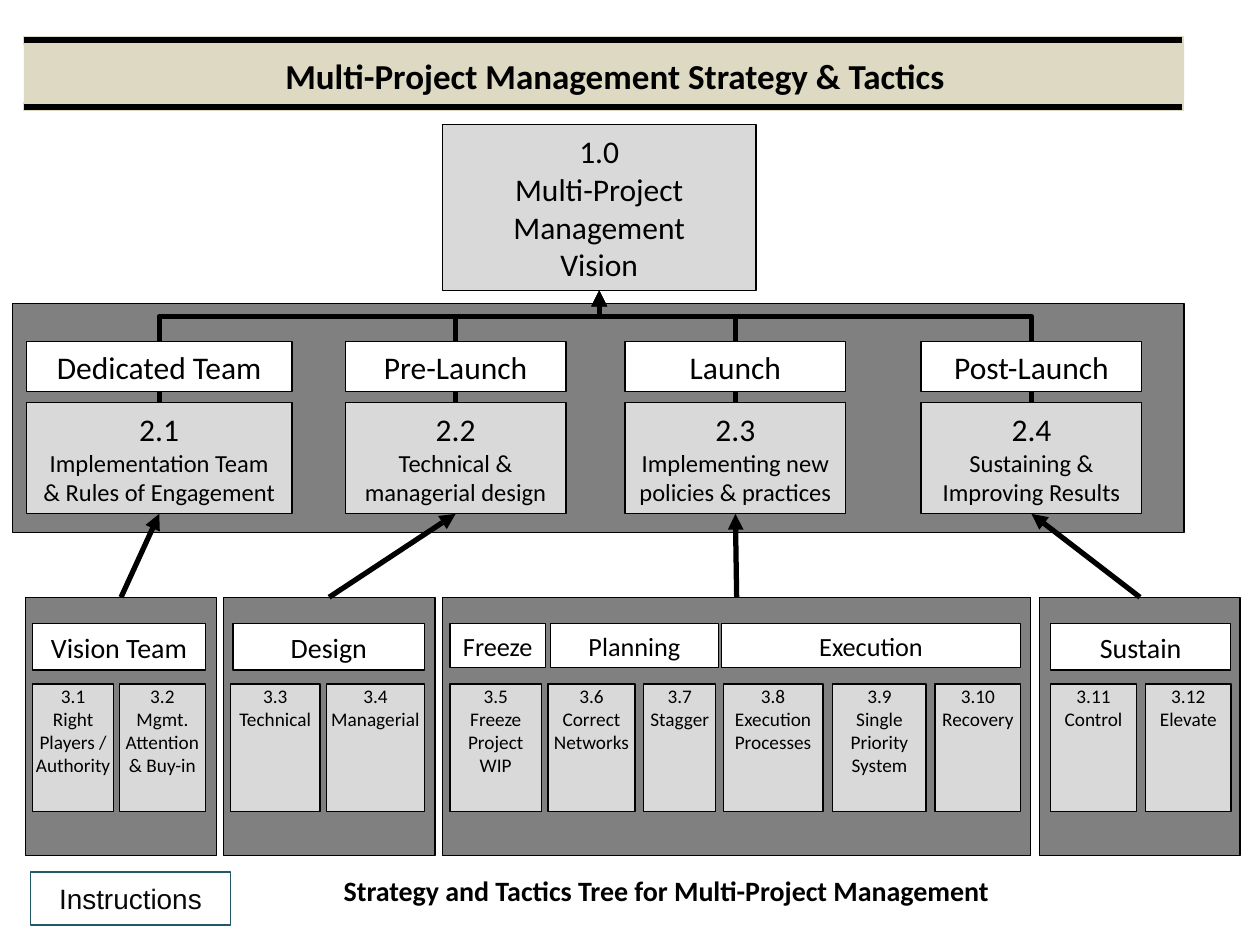
from lxml import etree
from pptx import Presentation
from pptx.dml.color import RGBColor as RGB
from pptx.enum.shapes import MSO_CONNECTOR as Link, MSO_SHAPE as Kind
from pptx.enum.text import MSO_ANCHOR as Anchor, PP_ALIGN as Align
from pptx.oxml.ns import qn
from pptx.util import Cm, Pt


class Theme:
    black, white = RGB(0, 0, 0), RGB(255, 255, 255)
    gray, pale = RGB(0x80, 0x80, 0x80), RGB(0xD9, 0xD9, 0xD9)
    sand, teal, ink = RGB(0xDD, 0xD9, 0xC3), RGB(0x21, 0x59, 0x68), RGB(8, 8, 8)
    font, plain = "Calibri", "Arial"
    title, big, head, mid, body, small = 20, 18, 16, 15, 14, 11
    thin, thick = 0.75, 3


deck = Presentation()
deck.slide_width, deck.slide_height = Cm(25.4), Cm(19.05)
slide = deck.slides.add_slide(deck.slide_layouts[6])
shapes = slide.shapes


def box(spot, fill, edge=Theme.black, lines=(), pad=(0.25, 0.13),
        anchor=Anchor.MIDDLE, font=Theme.font, color=Theme.black, bold=False):
    """Add a rectangle; lines holds (text, size) pairs."""
    rect = shapes.add_shape(Kind.RECTANGLE, *map(Cm, spot))
    rect.shadow.inherit = False
    rect.fill.solid()
    rect.fill.fore_color.rgb = fill
    if edge is None:
        rect.line.fill.background()
    else:
        rect.line.color.rgb = edge
        rect.line.width = Pt(Theme.thin)
    frame = rect.text_frame
    frame.word_wrap = True
    frame.vertical_anchor = anchor
    frame.margin_left = frame.margin_right = Cm(pad[0])
    frame.margin_top = frame.margin_bottom = Cm(pad[1])
    for i, (text, size) in enumerate(lines):
        para = frame.add_paragraph() if i else frame.paragraphs[0]
        para.text = text
        para.alignment = Align.CENTER
        para.font.name, para.font.size = font, Pt(size)
        para.font.color.rgb, para.font.bold = color, bold
    return rect


def arrow(kind):
    """Add a thick black connector with an arrowhead at its end."""
    line = shapes.add_connector(kind, 0, 0, 0, 0)
    line.line.color.rgb = Theme.black
    line.line.width = Pt(Theme.thick)
    props = line._element.spPr
    etree.SubElement(props.find(qn("a:ln")), qn("a:tailEnd"), type="triangle")
    etree.SubElement(props, qn("a:effectLst"))
    return line


# Title band
box((0.48, 0.86, 23.39, 1.22), Theme.sand, None)
for top in (0.74, 2.08):
    box((0.48, top, 23.37, 0.15), Theme.black, Theme.sand)
box((5.44, 0.97, 13.92, 1.12), Theme.sand, None,
    [("Multi-Project Management Strategy & Tactics", Theme.title)], bold=True)

# Vision box and gray panels
vision = box((8.92, 2.51, 6.32, 3.35), Theme.pale, lines=[
    (text, Theme.big) for text in ("1.0", "Multi-Project Management", "Vision")])
box((0.25, 6.12, 23.62, 4.62), Theme.gray)
panels = [box((x, 12.04, w, 5.21), Theme.gray)
          for x, w in ((0.51, 3.86), (4.5, 4.27), (8.92, 11.86), (20.96, 4.04))]

# Four phases, each linked up to the vision and from its panel
phases = (
    (0.53, 5.36, "Dedicated Team", "2.1", "Implementation Team & Rules of Engagement"),
    (6.96, 4.45, "Pre-Launch", "2.2", "Technical & managerial design"),
    (12.6, 4.45, "Launch", "2.3", "Implementing new policies & practices"),
    (18.57, 4.45, "Post-Launch", "2.4", "Sustaining & Improving Results"),
)
goal, foot = vision.left + vision.width // 2, vision.top + vision.height
for (x, w, name, num, text), panel in zip(phases, panels):
    phase = box((x, 8.12, w, 2.24), Theme.pale,
                lines=[(num, Theme.big), (text, Theme.body)])

    # Elbow that leaves upward: a turned frame around the midpoint
    start = phase.left + phase.width // 2
    rise, run = phase.top - foot, abs(goal - start)
    elbow = arrow(Link.ELBOW)
    elbow.left = (start + goal - rise) // 2
    elbow.top = (phase.top + foot - run) // 2
    elbow.width, elbow.height = rise, run
    form = elbow._element.spPr.find(qn("a:xfrm"))
    left = start < goal
    form.set("rot", str((90 if left else 270) * 60000))
    form.set("flipH", "1" if left else "0")
    form.set("flipV", "1")
    bends = elbow._element.spPr.find(qn("a:prstGeom")).get_or_add_avLst()
    etree.SubElement(bends, qn("a:gd"), name="adj1", fmla="val 77000")

    box((x, 6.88, w, 1.02), Theme.white, lines=[(name, Theme.big)])
    link = arrow(Link.STRAIGHT)
    link.begin_connect(panel, 0)
    link.end_connect(phase, 2)

# Group headers
heads = (
    (0.66, 3.48, "Vision Team", Theme.head), (4.7, 3.86, "Design", Theme.head),
    (9.07, 1.93, "Freeze", Theme.mid), (11.1, 3.38, "Planning", Theme.mid),
    (14.55, 6.02, "Execution", Theme.mid), (21.18, 3.63, "Sustain", Theme.head),
)
for x, w, name, size in heads:
    high = 0.94 if size == Theme.head else 0.89
    box((x, 12.57, w, high), Theme.white, lines=[(name, size)], pad=(0, 0))

# Numbered tactics
tiles = (
    (0.66, 1.63, "Right Players / Authority"), (2.41, 1.73, "Mgmt. Attention & Buy-in"),
    (4.65, 1.8, "Technical"), (6.58, 1.98, "Managerial"),
    (9.07, 1.85, "Freeze Project", "WIP"), (11.05, 1.75, "Correct Networks"),
    (12.98, 1.45, "Stagger"), (14.58, 2.01, "Execution Processes"),
    (16.79, 1.88, "Single Priority System"), (18.85, 1.73, "Recovery"),
    (21.18, 1.73, "Control"), (23.09, 1.73, "Elevate"),
)
for i, (x, w, *words) in enumerate(tiles, 1):
    box((x, 13.79, w, 2.57), Theme.pale, pad=(0, 0), anchor=Anchor.TOP,
        lines=[(text, Theme.small) for text in (f"3.{i}", *words)])

# Caption and instructions
box((6.12, 17.48, 14.63, 1.14), Theme.white, None, anchor=Anchor.TOP, bold=True,
    lines=[("Strategy and Tactics Tree for Multi-Project Management", Theme.head)])
box((0.61, 17.58, 4.04, 1.07), Theme.white, Theme.teal,
    [("Instructions", Theme.head)], font=Theme.plain, color=Theme.ink)

deck.save("out.pptx")
